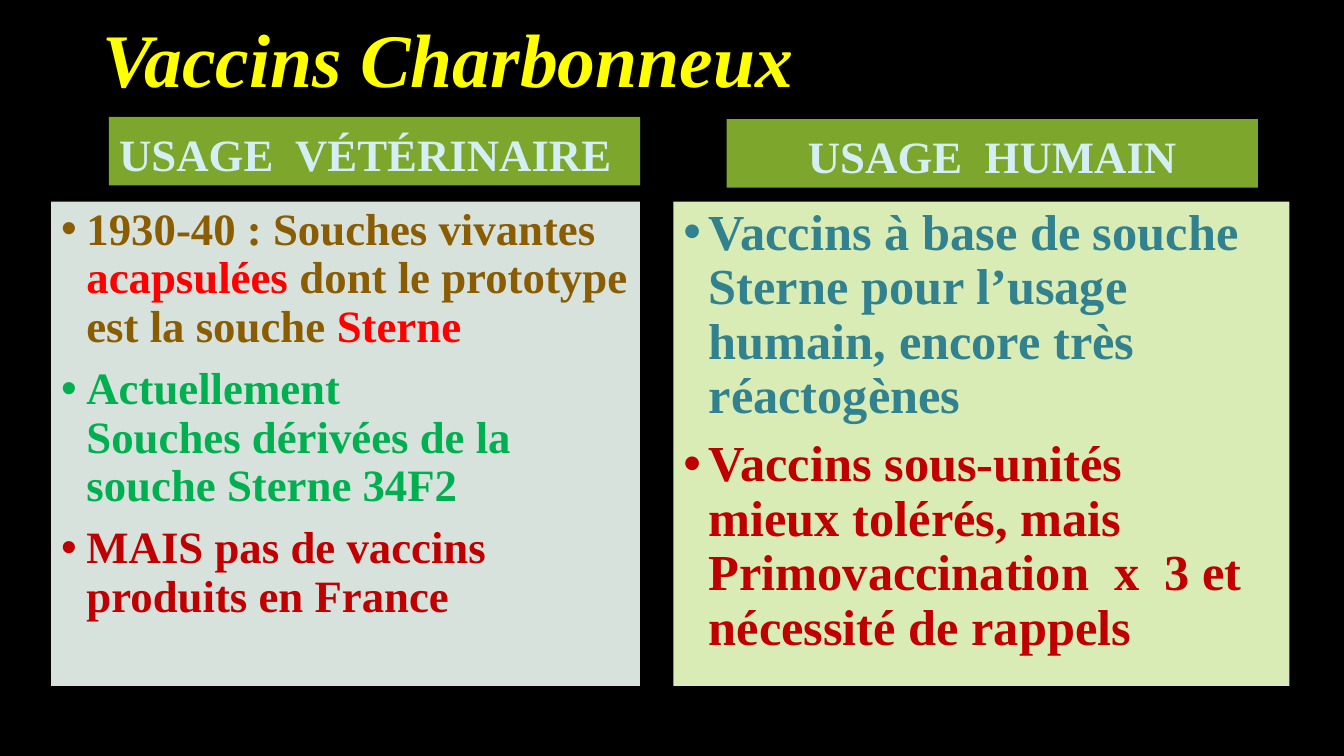
from dataclasses import dataclass

from lxml.etree import SubElement
from pptx import Presentation
from pptx.dml.color import RGBColor
from pptx.enum.text import MSO_ANCHOR, MSO_AUTO_SIZE, PP_ALIGN
from pptx.oxml.ns import qn
from pptx.util import Pt


@dataclass(frozen=True)
class Theme:
    font: str = "Times New Roman"
    background: str = "000000"
    title: str = "FFFF00"
    header_fill: str = "7DA62C"
    header_text: str = "D4EFF4"
    veterinary_fill: str = "D7E2DC"
    human_fill: str = "DAECB6"
    brown: str = "8A5D02"
    red: str = "FF0000"
    green: str = "00B050"
    teal: str = "31828E"
    dark_red: str = "C00000"
    title_size: int = 54
    text_size: int = 32
    large_size: int = 36


THEME = Theme()
TITLE = "Vaccins Charbonneux"

# Each paragraph is a list of (text, colour); "\n" is a line break.
VETERINARY = [
    [("1930-40 : Souches vivantes ", THEME.brown), ("acapsulées ", THEME.red),
     ("dont le prototype est la souche ", THEME.brown), ("Sterne", THEME.red)],
    [("Actuellement\nSouches dérivées de la souche Sterne 34F2", THEME.green)],
    [("MAIS pas de vaccins produits en France", THEME.dark_red)],
]
HUMAN = [
    [("Vaccins à base de souche Sterne pour l’usage humain, encore très réactogènes",
      THEME.teal)],
    [("Vaccins sous-unités  mieux tolérés, mais Primovaccination  x  3 et "
      "nécessité de rappels", THEME.dark_red)],
]

# Header, header left, header top, alignment, content, left, width, fill, size
COLUMNS = [
    ("USAGE  VÉTÉRINAIRE", 77.8, 83.5, PP_ALIGN.LEFT,
     VETERINARY, 36.5, 420.5, THEME.veterinary_fill, THEME.text_size),
    ("USAGE  HUMAIN", 519.1, 85, PP_ALIGN.CENTER,
     HUMAN, 481, 440, THEME.human_fill, THEME.large_size),
]
HEADER_W, HEADER_H = 379.4, 49
PANEL_TOP, PANEL_H = 144, 346
INDENT = 18


def paint(fill, color):
    fill.solid()
    fill.fore_color.rgb = RGBColor.from_string(color)


def place(sp, left, top, width, height, fill=None):
    sp.left, sp.top, sp.width, sp.height = map(Pt, (left, top, width, height))
    if fill:
        paint(sp.fill, fill)


def add_bullet(p):
    pPr = p._p.get_or_add_pPr()
    pPr.set("marL", str(Pt(INDENT)))
    pPr.set("indent", str(-Pt(INDENT)))
    SubElement(pPr, qn("a:buFont")).set("typeface", "Arial")
    SubElement(pPr, qn("a:buChar")).set("char", "•")


def write(sp, paragraphs, size, anchor=MSO_ANCHOR.TOP, align=PP_ALIGN.LEFT,
          spacing=0.9, bullets=False, italic=False):
    tf = sp.text_frame
    tf.word_wrap = True
    tf.auto_size = MSO_AUTO_SIZE.NONE
    tf.vertical_anchor = anchor
    for i, runs in enumerate(paragraphs):
        p = tf.add_paragraph() if i else tf.paragraphs[0]
        p.alignment = align
        p.line_spacing = spacing
        p.space_before = Pt(10 if i else 0)
        if bullets:
            add_bullet(p)
        for text, color in runs:
            for n, line in enumerate(text.split("\n")):
                if n:
                    p.add_line_break()
                r = p.add_run()
                r.text = line
                r.font.name = THEME.font
                r.font.size = Pt(size)
                r.font.bold = True
                r.font.italic = italic
                r.font.color.rgb = RGBColor.from_string(color)


def main():
    prs = Presentation()
    prs.slide_width, prs.slide_height = Pt(960), Pt(540)
    comparison = prs.slide_layouts[4]
    s = prs.slides.add_slide(comparison)
    paint(s.background.fill, THEME.background)

    title, *bodies = s.placeholders
    place(title, 66, -7.2, 828, 104.4)
    write(title, [[(TITLE, THEME.title)]], THEME.title_size,
          anchor=MSO_ANCHOR.MIDDLE, italic=True)

    for column, header, panel in zip(COLUMNS, bodies[::2], bodies[1::2]):
        label, header_left, header_top, align, content, left, width, fill, size = column
        place(header, header_left, header_top, HEADER_W, HEADER_H, THEME.header_fill)
        write(header, [[(label, THEME.header_text)]], THEME.text_size,
              anchor=MSO_ANCHOR.BOTTOM, align=align, spacing=1.0)
        place(panel, left, PANEL_TOP, width, PANEL_H, fill)
        write(panel, content, size, bullets=True)

    prs.save("out.pptx")


if __name__ == "__main__":
    main()
